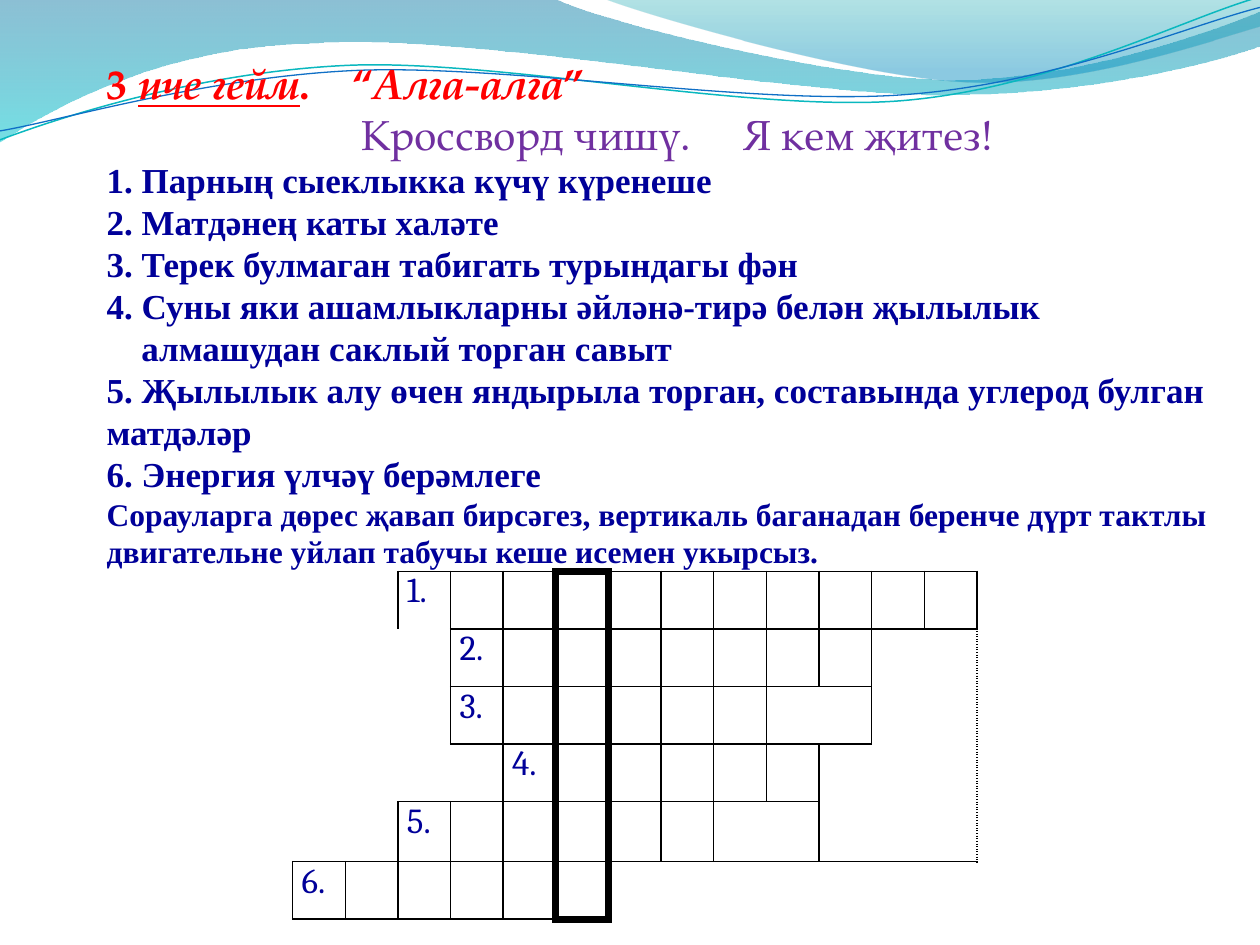
import pptx
import pptx.util
import pptx.dml.color
import pptx.oxml.ns
from lxml import etree

Cm, Pt = pptx.util.Cm, pptx.util.Pt
qn = pptx.oxml.ns.qn

COLORS = {
    "deep": "0074A1", "cyan": "00C6CF", "teal": "00A1A9", "sky": "008BBF",
    "aqua": "0AB8BF", "blue": "0F6FC6", "black": "000000",
    "red": "FF0000", "purple": "7030A0", "navy": "000099",
}

# Start point, then straight steps (one point) and curves (three points), in cm
BACK_WAVE = [
    [(0, 0)], [(11.18, -0.03)],
    [(12.09, 0.43), (16.87, 1.6), (19.25, 1.6)],
    [(21.67, 1.6), (24.33, 0.66), (25.4, 0.23)],
    [(25.43, 0.91)],
    [(24.97, 1.12), (22.1, 1.93), (18.95, 1.91)],
    [(15.8, 1.91), (9.7, 0.71), (6.53, 0.86)],
    [(3.28, 0.91), (1.17, 2.11), (-0.03, 2.87)],
    [(0, 0)],
]
FRONT_WAVE = [
    [(12.17, -0.03)],
    [(12.93, 0.28), (17.32, 1.57), (19.53, 1.65)],
    [(21.74, 1.75), (24.41, 0.81), (25.4, 0.53)],
    [(25.4, 0)], [(12.17, -0.03)],
]
AQUA_LINE = [
    [(-0.05, 2.22)],
    [(1.19, 1.82), (4.02, 1.04), (7.05, 1.05)],
    [(10.05, 1.07), (15.02, 2.37), (18.08, 2.29)],
    [(21.13, 2.2), (23.87, 0.91), (25.41, 0.55)],
]
BLUE_LINE = [
    [(-0.04, 2.04)],
    [(1.16, 1.9), (4.18, 1.15), (7.2, 1.16)],
    [(10.25, 1.18), (15.13, 2.25), (18.18, 2.17)],
    [(21.21, 2.1), (23.93, 1.06), (25.45, 0.75)],
]

QUESTIONS = [
    "1. Парның сыеклыкка күчү күренеше",
    "2. Матдәнең каты халәте",
    "3. Терек булмаган табигать турындагы фән",
    "4. Суны яки ашамлыкларны әйләнә-тирә белән җылылык",
    "алмашудан саклый торган савыт",
    "5. Җылылык алу өчен яндырыла торган, составында углерод булган матдәләр",
    "6. Энергия үлчәү берәмлеге",
]
HINT = ("Сорауларга дөрес җавап бирсәгез, вертикаль баганадан беренче дүрт "
        "тактлы двигательне уйлап табучы кеше исемен укырсыз.")

COLS, KEY_COL, TABLE_WIDTH = 13, 5, 13.8
WORDS = [(2, 12), (3, 10), (3, 8), (4, 9), (2, 7), (0, 5)]  # first, last column
THIN, THICK, DOT = (1, "solid"), (4.5, "solid"), (1, "sysDot")
SPECIAL_CELLS = [  # row, column, rows, columns, borders
    (0, 0, 1, 2, {"R": THIN}),
    (0, 2, 1, 1, {"L": THIN, "T": THIN, "R": THIN}),
    (1, 0, 1, 3, {"R": THIN}),
    (1, 11, 2, 2, {"L": THIN, "T": THIN, "R": DOT}),
    (2, 1, 1, 2, {"R": THIN}),
    (2, 9, 1, 2, {"L": THIN, "T": THIN}),
    (3, 0, 1, 3, {}),
    (3, 3, 1, 1, {"T": THIN, "R": THIN, "B": THIN}),
    (3, 10, 2, 3, {"L": THIN, "R": DOT}),
    (4, 0, 1, 2, {"R": THIN, "B": THIN}),
    (4, 8, 1, 2, {"L": THIN, "T": THIN}),
    (5, 6, 1, 7, {"L": THICK, "T": THIN}),
]


def rgb(name):
    return pptx.dml.color.RGBColor.from_string(COLORS[name])


def add_outline(s, steps, close):
    """Draw all points as line segments, then join each three into a curve."""
    start, *rest = [(Cm(x), Cm(y)) for step in steps for x, y in step]
    fb = s.shapes.build_freeform(*start)
    fb.add_line_segments(rest, close=close)
    sp = fb.convert_to_shape()
    sp.shadow.inherit = False
    segments = iter(list(sp._element.iter(qn("a:lnTo"))))
    for step in steps[1:]:
        group = [next(segments) for _ in step]
        if len(group) == 3:
            curve = etree.Element(qn("a:cubicBezTo"))
            group[0].addprevious(curve)
            for segment in group:
                curve.append(segment[0])
                segment.getparent().remove(segment)
    return sp


def add_wave(s, steps, stops):
    """Stops are (position, colour, opacity in percent), from top to bottom."""
    sp = add_outline(s, steps, True)
    sp.line.fill.background()
    sp.fill.gradient()
    sp.fill.gradient_angle = 270
    for stop, (position, color, _) in zip(sp.fill.gradient_stops, stops):
        stop.position = position
        stop.color.rgb = rgb(color)
    for clr, (_, _, opacity) in zip(sp._element.spPr.iter(qn("a:srgbClr")), stops):
        etree.SubElement(clr, qn("a:alpha"), val=str(opacity * 1000))


def add_curve(s, steps, color, width):
    sp = add_outline(s, steps, False)
    sp.rotation = 357.3
    sp.fill.background()
    sp.line.color.rgb = rgb(color)
    sp.line.width = Pt(width)


def add_run(p, text, size, font, color, bold=None, italic=None, underline=None):
    r = p.add_run()
    r.text = text
    f = r.font
    f.size, f.name, f.color.rgb = Pt(size), font, rgb(color)
    f.bold, f.italic, f.underline = bold, italic, underline


def set_tabs(p, *positions):
    tabs = etree.SubElement(p._p.get_or_add_pPr(), qn("a:tabLst"))
    for pos in positions:
        etree.SubElement(tabs, qn("a:tab"), pos=str(Cm(pos)), algn="l")


def add_questions(s):
    tf = s.shapes.add_textbox(Cm(1.9), Cm(1.04), Cm(23.5), Cm(11.45)).text_frame
    tf.word_wrap = True
    p = tf.paragraphs[0]
    set_tabs(p, 4.95)
    for text, italic, underline in [("3 ", False, False), ("нче гейм", True, True),
                                    (".\t“", False, False), ("Алга-алга", True, False),
                                    ("”", False, False)]:
        add_run(p, text, 24, "TeX Gyre Pagella", "red", True, italic, underline)
    p = tf.add_paragraph()
    set_tabs(p, 5.13, 12.83)
    add_run(p, "\tКроссворд чишү.\tЯ кем җитез!", 24, "TeX Gyre Pagella", "purple")
    for text in QUESTIONS:
        p = tf.add_paragraph()
        if not text[0].isdigit():
            p._p.get_or_add_pPr().set("marL", str(Cm(0.7)))
        add_run(p, text, 20, "Times New Roman", "navy", True)
    add_run(tf.add_paragraph(), HINT, 18, "Times New Roman", "navy", True)


def set_borders(cell, borders):
    tcPr = cell._tc.get_or_add_tcPr()
    for side in "LRTB":
        width, dash = borders.get(side, (0, None))
        ln = etree.SubElement(tcPr, qn("a:ln" + side), w=str(Pt(width)))
        if not width:
            etree.SubElement(ln, qn("a:noFill"))
            continue
        fill = etree.SubElement(ln, qn("a:solidFill"))
        etree.SubElement(fill, qn("a:srgbClr"), val=COLORS["black"])
        etree.SubElement(ln, qn("a:prstDash"), val=dash)
    cell.fill.background()


def letter_borders(row, col):
    """Thin grid, with a thick frame round the key column."""
    borders = dict.fromkeys("LRTB", THIN)
    if col in (KEY_COL, KEY_COL + 1):
        borders["L"] = THICK
    if col in (KEY_COL - 1, KEY_COL):
        borders["R"] = THICK
    if col == KEY_COL and row == 0:
        borders["T"] = THICK
    if col == KEY_COL and row == len(WORDS) - 1:
        borders["B"] = THICK
    return borders


def add_crossword(s):
    tbl = s.shapes.add_table(len(WORDS), COLS, Cm(5.9), Cm(11.52),
                             Cm(TABLE_WIDTH), Cm(7.01)).table
    tbl.first_row = tbl.horz_banding = False
    for column in tbl.columns:
        column.width = Cm(TABLE_WIDTH / COLS)
    special = {(row, col): borders for row, col, _, _, borders in SPECIAL_CELLS}
    for row, (first, last) in enumerate(WORDS):
        tbl.rows[row].height = Cm(1.21 if row == 4 else 1.16)
        for col in range(COLS):
            cell = tbl.cell(row, col)
            cell.margin_left = cell.margin_right = Cm(0.18)
            cell.margin_top = cell.margin_bottom = 0
            usual = letter_borders(row, col) if first <= col <= last else {}
            set_borders(cell, special.get((row, col), usual))
        add_run(tbl.cell(row, first).text_frame.paragraphs[0], f"{row + 1}.",
                20, "Cambria", "navy")
    for row, col, rows, cols, _ in SPECIAL_CELLS:
        if rows * cols > 1:
            tbl.cell(row, col).merge(tbl.cell(row + rows - 1, col + cols - 1))


def main():
    prs = pptx.Presentation()
    prs.slide_width, prs.slide_height = Cm(25.4), Cm(19.05)
    s = prs.slides.add_slide(prs.slide_layouts[6])
    add_wave(s, BACK_WAVE, [(0, "deep", 45), (1, "cyan", 55)])
    add_wave(s, FRONT_WAVE, [(0, "teal", 30), (0.8, "sky", 45)])
    add_curve(s, AQUA_LINE, "aqua", 0.85)
    add_curve(s, BLUE_LINE, "blue", 0.75)
    add_crossword(s)
    add_questions(s)
    prs.save("out.pptx")


if __name__ == "__main__":
    main()
